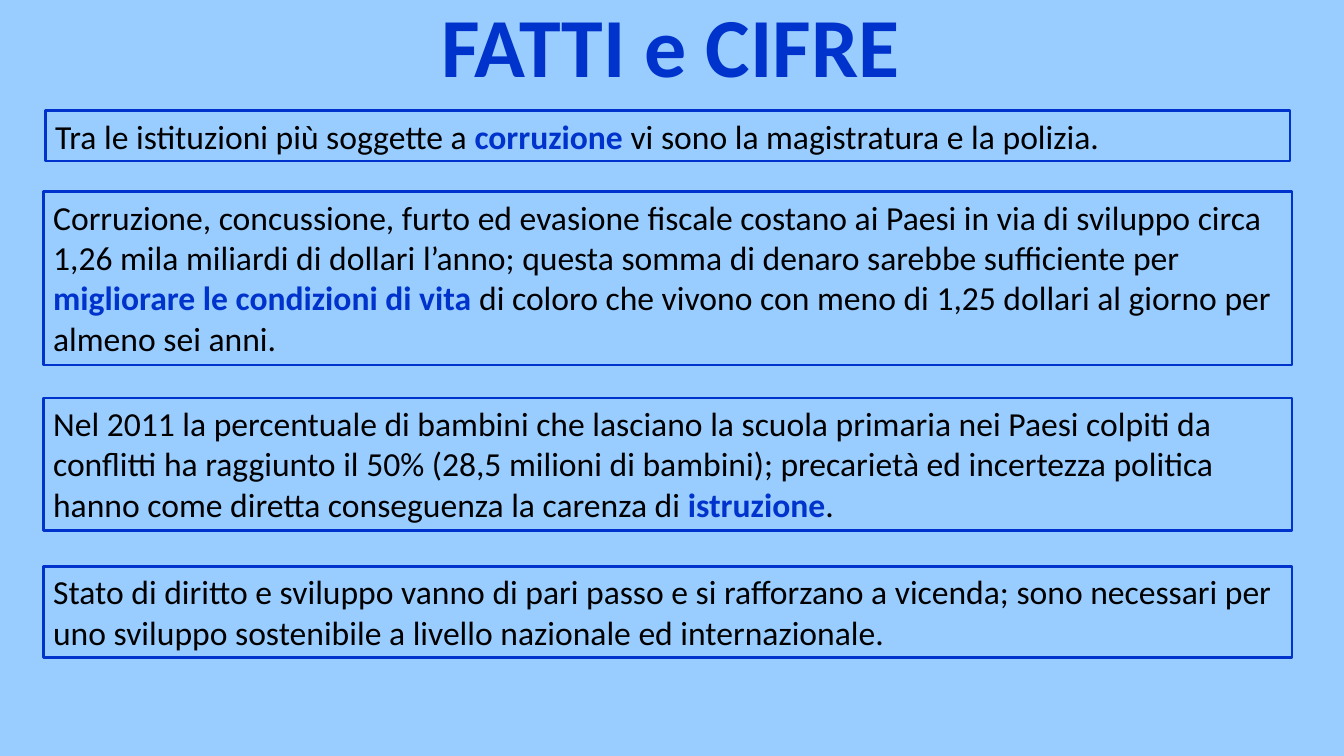
from pptx import Presentation
from pptx.dml.color import RGBColor
from pptx.enum.shapes import MSO_SHAPE
from pptx.enum.text import MSO_ANCHOR, MSO_AUTO_SIZE, PP_ALIGN
from pptx.util import Cm, Pt

COLOURS = {"background": "99CCFF", "accent": "0033CC", "text": "000000"}

# left, top, width, height in cm, then (text, highlighted) pieces
FACTS = [
    (1.14, 2.79, 31.37, 1.27, [
        ("Tra le istituzioni più soggette a ", False),
        ("corruzione", True),
        (" vi sono la magistratura e la polizia.", False),
    ]),
    (1.09, 4.83, 31.47, 4.37, [
        ("Corruzione, concussione, furto ed evasione fiscale costano ai Paesi in via "
         "di sviluppo circa 1,26 mila miliardi di dollari l’anno; questa somma di "
         "denaro sarebbe sufficiente per ", False),
        ("migliorare le condizioni di vita ", True),
        ("di coloro che vivono con meno di 1,25 dollari al giorno per almeno sei "
         "anni.", False),
    ]),
    (1.09, 10.03, 31.47, 3.33, [
        ("Nel 2011 la percentuale di bambini che lasciano la scuola primaria nei "
         "Paesi colpiti da conflitti ha raggiunto il 50% (28,5 milioni di bambini); "
         "precarietà ed incertezza politica hanno come diretta conseguenza la "
         "carenza di ", False),
        ("istruzione", True),
        (".", False),
    ]),
    (1.09, 14.27, 31.47, 2.31, [
        ("Stato di diritto e sviluppo vanno di pari passo e si rafforzano a vicenda; "
         "sono necessari per uno sviluppo sostenibile a livello nazionale ed "
         "internazionale.", False),
    ]),
]


def colour(name):
    return RGBColor.from_string(COLOURS[name])


def format_span(span, size, highlighted):
    span.font.name = "Calibri"
    span.font.size = Pt(size)
    span.font.bold = highlighted
    span.font.color.rgb = colour("accent" if highlighted else "text")


deck = Presentation()
deck.slide_width = Cm(33.87)
deck.slide_height = Cm(19.05)
page = deck.slides.add_slide(deck.slide_layouts[6])
page.background.fill.solid()
page.background.fill.fore_color.rgb = colour("background")

title = page.shapes.add_textbox(Cm(10.87), Cm(-0.28), Cm(12.6), Cm(2.82))
title.text_frame.word_wrap = True
title.text_frame.auto_size = MSO_AUTO_SIZE.SHAPE_TO_FIT_TEXT
title.text_frame.text = "FATTI e CIFRE"
format_span(title.text_frame.paragraphs[0].runs[0], 60, True)

for left, top, width, height, pieces in FACTS:
    box = page.shapes.add_shape(
        MSO_SHAPE.RECTANGLE, Cm(left), Cm(top), Cm(width), Cm(height))
    box.shadow.inherit = False
    box.fill.background()
    box.line.color.rgb = colour("accent")
    box.line.width = Pt(2)
    frame = box.text_frame
    frame.word_wrap = True
    frame.auto_size = MSO_AUTO_SIZE.SHAPE_TO_FIT_TEXT
    frame.vertical_anchor = MSO_ANCHOR.TOP
    para = frame.paragraphs[0]
    para.alignment = PP_ALIGN.LEFT
    for text, highlighted in pieces:
        span = para.add_run()
        span.text = text
        format_span(span, 24, highlighted)

deck.save("out.pptx")
